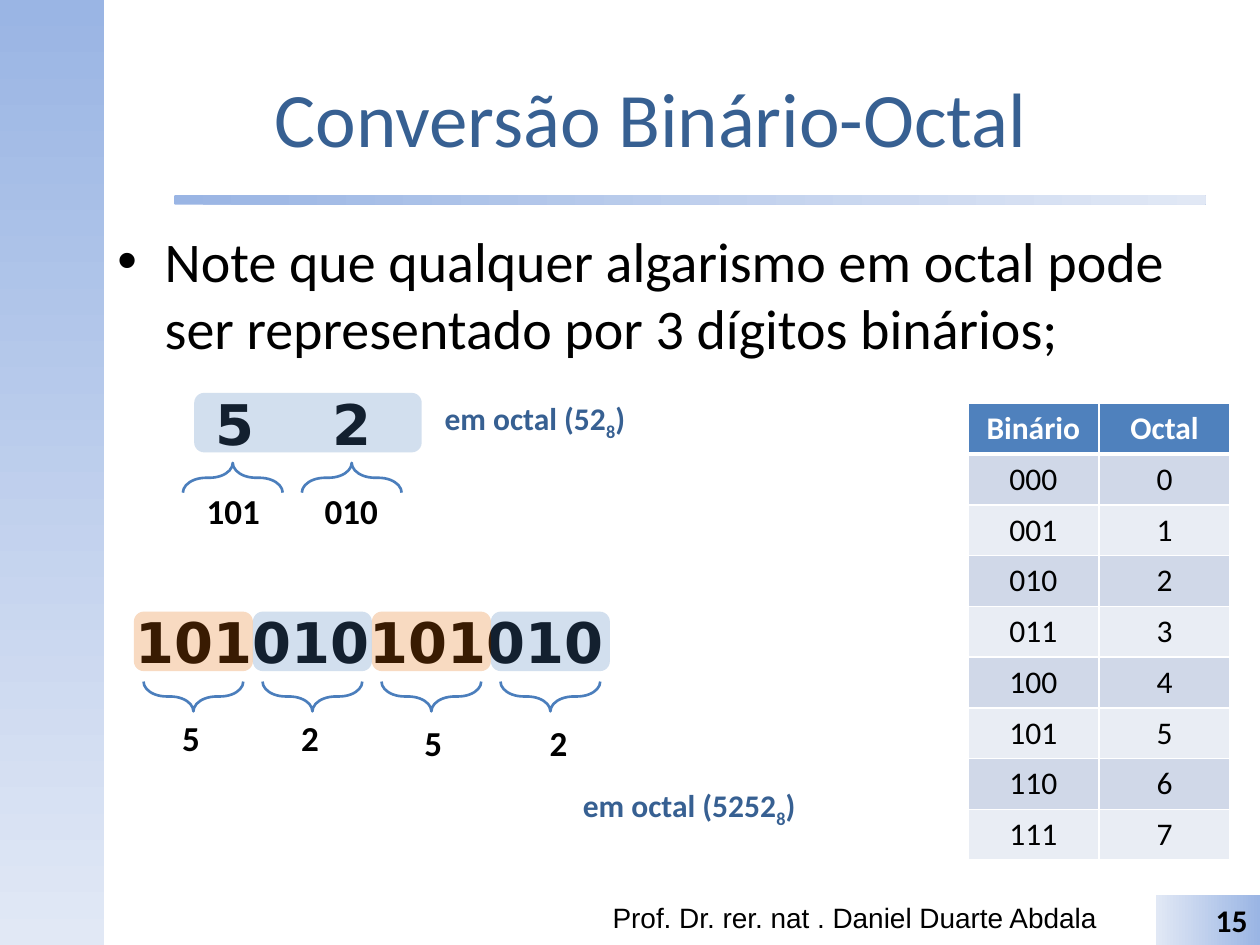
"""Build the slide on converting between binary and octal numbers."""
from lxml.etree import SubElement
from pptx import Presentation
from pptx.dml.color import RGBColor
from pptx.enum.shapes import MSO_SHAPE as Preset
from pptx.enum.text import MSO_ANCHOR as Anchor, PP_ALIGN as Align
from pptx.oxml import parse_xml
from pptx.oxml.ns import nsdecls, qn
from pptx.util import Pt

color = RGBColor.from_string
BLUE, ORANGE, NAVY = "4F81BD", "E46C0A", "376092"
DIGIT_PITCH = 68

presentation = Presentation()
presentation.slide_width, presentation.slide_height = Pt(720), Pt(540)
slide = presentation.slides.add_slide(presentation.slide_layouts[5])


def add_shape(preset, left, top, width, height):
    shape = slide.shapes.add_shape(preset, Pt(left), Pt(top), Pt(width), Pt(height))
    shape.shadow.inherit = False
    shape.line.fill.background()
    return shape


def add_text(left, top, width, height, text, size, font="Calibri", bold=True, text_color="000000"):
    box = slide.shapes.add_textbox(Pt(left), Pt(top), Pt(width), Pt(height))
    box.text_frame.word_wrap = True
    paragraph = box.text_frame.paragraphs[0]
    for index, part in enumerate(text.split("_")):
        run = paragraph.add_run()
        run.text = part
        run.font.size, run.font.name, run.font.bold = Pt(size), font, bold
        run.font.color.rgb = color(text_color)
        if index == 1:
            run._r.get_or_add_rPr().set("baseline", "-25000")
    return paragraph


for preset, left, top, width, height, angle in (
    (Preset.RECTANGLE, 0, 0, 59.5, 540, 270),
    (Preset.ROUNDED_RECTANGLE, 99.5, 111.5, 589.5, 5.5, 0),
    (Preset.RECTANGLE, 660.5, 511.5, 59.5, 28.5, 180),
):
    band = add_shape(preset, left, top, width, height)
    band.fill.gradient()
    band.fill.gradient_angle = angle
    for stop, stop_color in zip(band.fill.gradient_stops, ("9AB5E4", "E1E8F5")):
        stop.color.rgb = color(stop_color)

band.text_frame.text = "15"
band.text_frame.vertical_anchor = Anchor.MIDDLE
page_number = band.text_frame.paragraphs[0]
page_number.alignment = Align.RIGHT
page_number.font.size, page_number.font.name, page_number.font.bold = Pt(18), "Calibri", True
page_number.runs[0].font.color.rgb = color("000000")

title = slide.shapes.title
title.left, title.top, title.width, title.height = Pt(60), Pt(21.5), Pt(624), Pt(90)
title.text_frame.text = "Conversão Binário-Octal"
title.text_frame.vertical_anchor = Anchor.MIDDLE
title_paragraph = title.text_frame.paragraphs[0]
title_paragraph.alignment = Align.CENTER
title_font = title_paragraph.runs[0].font
title_font.size, title_font.name = Pt(44), "Calibri"
title_font.color.rgb = color(NAVY)

body = add_text(60, 126, 624, 90,
                "Note que qualquer algarismo em octal pode ser representado por 3 dígitos binários;",
                32, bold=False)
body.space_before = Pt(6.4)
properties = body._p.get_or_add_pPr()
properties.set("marL", str(Pt(27)))
properties.set("indent", str(-Pt(27)))
SubElement(properties, qn("a:buFont")).set("typeface", "Arial")
SubElement(properties, qn("a:buChar")).set("char", "•")

add_text(343, 511, 302, 29, "Prof. Dr. rer. nat . Daniel Duarte Abdala", 16, "Arial", False)
add_text(70.5, 343.5, 340, 46, "101010101010", 32, "DejaVu Sans")
octal_digits = add_text(116, 219, 113, 46, "5\t2", 32, "DejaVu Sans")
tab_stops = SubElement(octal_digits._p.get_or_add_pPr(), qn("a:tabLst"))
tab_stop = SubElement(tab_stops, qn("a:tab"))
tab_stop.set("pos", str(Pt(67)))
tab_stop.set("algn", "l")

chips = [(111, 224.5, 130, BLUE)]
chips += [(76.5 + DIGIT_PITCH * i, 349.5, DIGIT_PITCH, (ORANGE, BLUE)[i % 2]) for i in range(4)]
for left, top, width, chip_color in chips:
    chip = add_shape(Preset.ROUNDED_RECTANGLE, left, top, width, 34)
    chip.fill.solid()
    chip.fill.fore_color.rgb = color(chip_color)
    SubElement(chip._element.spPr.find(".//" + qn("a:srgbClr")), qn("a:alpha")).set("val", "25000")

braces = [(124.5 + DIGIT_PITCH * i, 244.5, 270) for i in range(2)]
braces += [(102 + DIGIT_PITCH * i, 369.5, 90) for i in range(4)]
for left, top, rotation in braces:
    brace = add_shape(Preset.RIGHT_BRACE, left, top, 17, 57)
    brace.rotation = rotation
    brace.adjustments[0] = 0.78
    brace.fill.background()
    brace.line.color.rgb = color("4B7EBC")
    brace.line.width = Pt(1.5)

for left, top, label in (
    (111, 276, "101"), (178.5, 276, "010"),
    (97, 406, "5"), (165, 406, "2"), (235.5, 408.5, "5"), (307, 408.5, "2"),
):
    add_text(left, top, 50, 31.5, label, 20)
for left, top, label in ((247, 224.5, "em octal (52_8_)"), (326, 445.5, "em octal (5252_8_)")):
    add_text(left, top, 150, 29, label, 18, text_color=NAVY)

rows = [("Binário", "Octal")] + [(f"{value:03b}", str(value)) for value in range(8)]
table = slide.shapes.add_table(9, 2, Pt(553), Pt(230.5), Pt(150), Pt(261)).table
for row_index, row in enumerate(rows):
    header = row_index == 0
    for column_index, text in enumerate(row):
        cell = table.cell(row_index, column_index)
        cell.text_frame.text = text
        paragraph = cell.text_frame.paragraphs[0]
        paragraph.alignment = Align.CENTER
        font = paragraph.runs[0].font
        font.size, font.name, font.bold = Pt(18), "Calibri", header
        font.color.rgb = color("FFFFFF" if header else "000000")
        cell.fill.solid()
        cell.fill.fore_color.rgb = color(BLUE if header else ("E9EDF4", "D0D8E8")[row_index % 2])
        for position, side in enumerate("LRTB"):
            thick = (side, row_index) in (("B", 0), ("T", 1))
            border = parse_xml(
                f'<a:ln{side} {nsdecls("a")} w="{Pt(3 if thick else 1)}">'
                f'<a:solidFill><a:srgbClr val="FFFFFF"/></a:solidFill></a:ln{side}>')
            cell._tc.get_or_add_tcPr().insert(position, border)

presentation.save("out.pptx")
